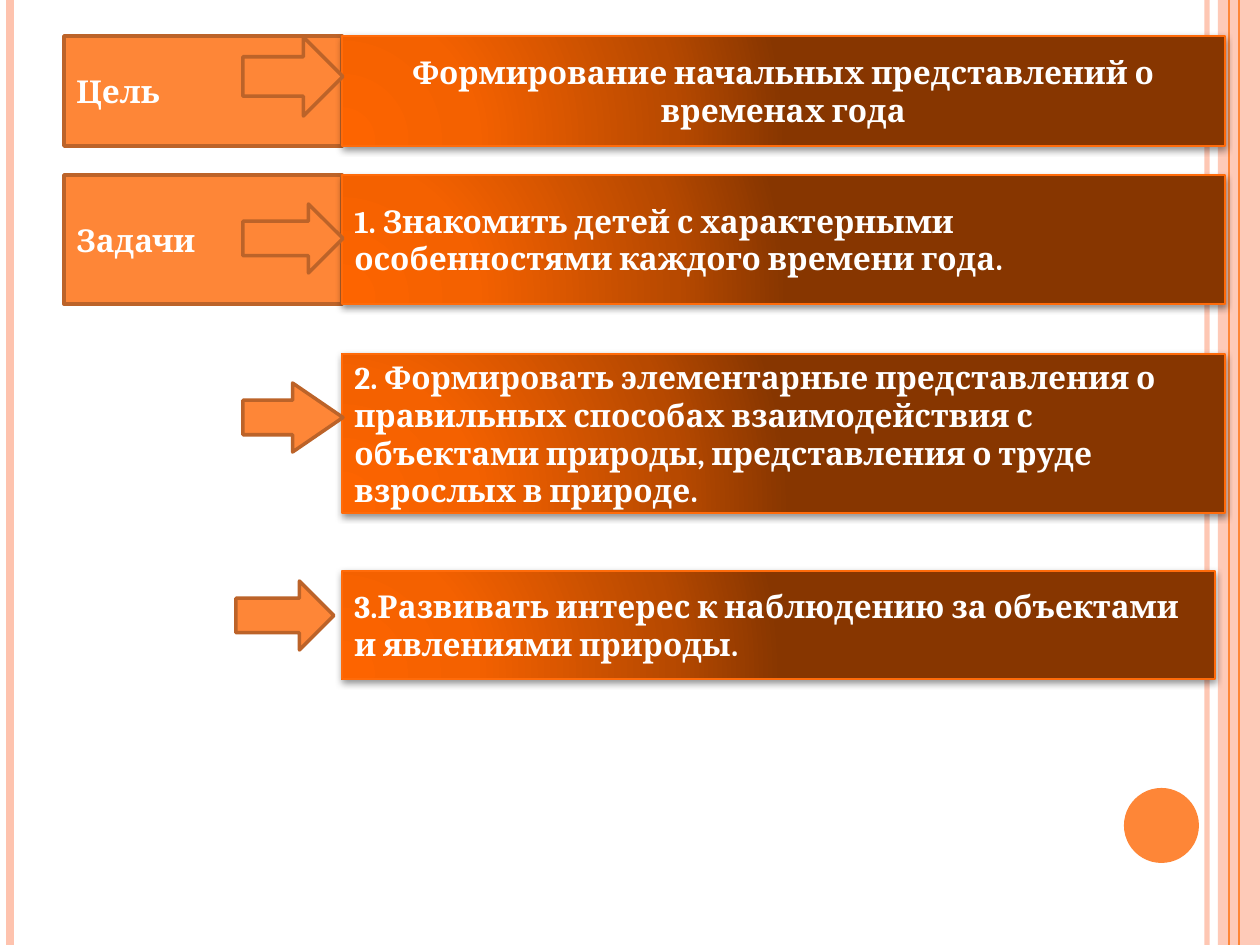
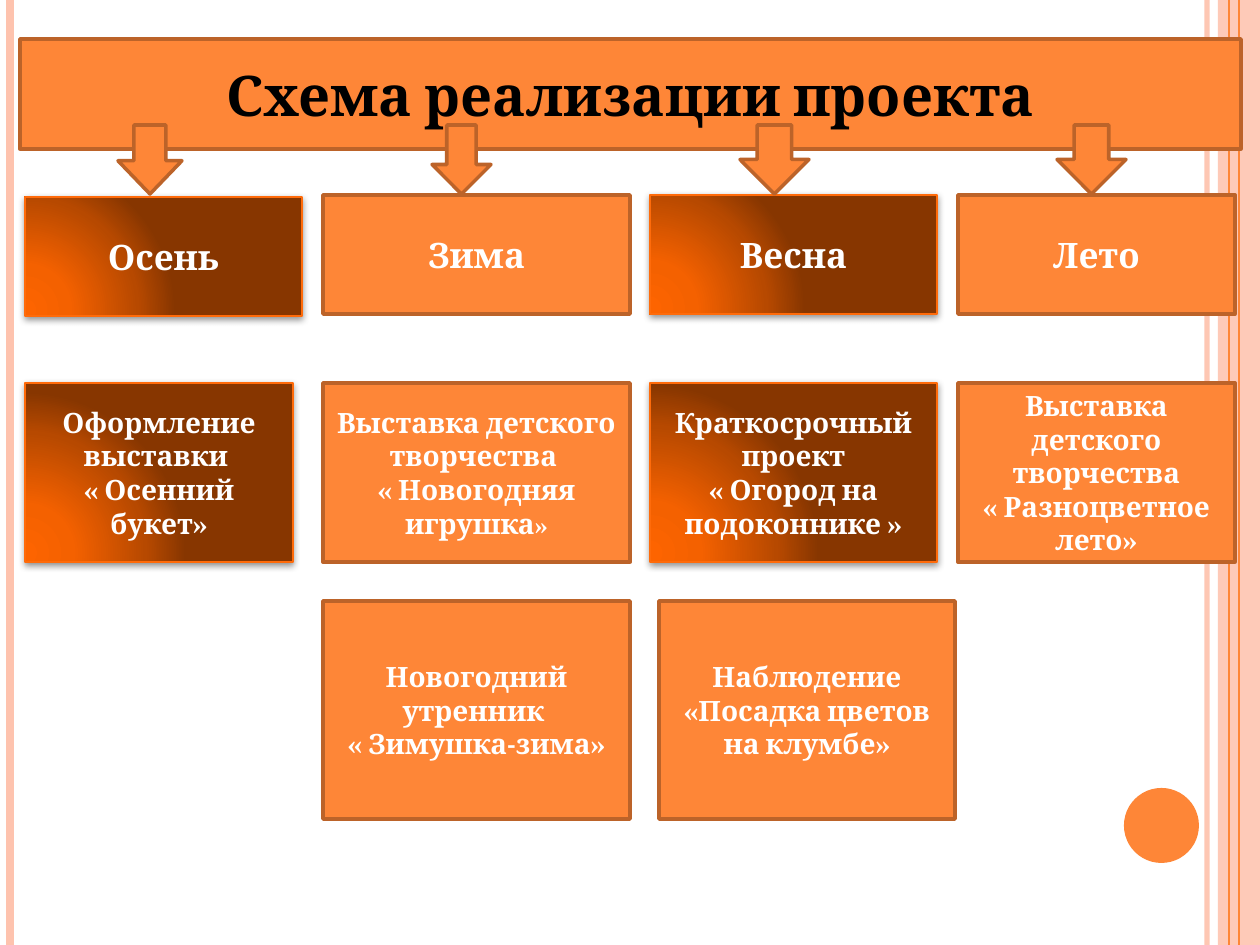
from dataclasses import dataclass

from lxml.etree import SubElement
from pptx import Presentation
from pptx.dml.color import RGBColor
from pptx.enum.shapes import MSO_CONNECTOR, MSO_SHAPE
from pptx.enum.text import MSO_ANCHOR, MSO_AUTO_SIZE, PP_ALIGN
from pptx.oxml import parse_xml
from pptx.oxml.ns import nsdecls, qn
from pptx.util import Emu, Pt

EMU_PER_PX = 914400 / 126
SLIDE_WIDTH, SLIDE_HEIGHT = 1260, 945

WHITE = RGBColor(0xFF, 0xFF, 0xFF)
BLACK = RGBColor(0x00, 0x00, 0x00)
ORANGE = RGBColor(0xFE, 0x86, 0x37)
BROWN = RGBColor(0xBC, 0x63, 0x29)
PEACH = RGBColor(0xFE, 0xC3, 0xAE)
GLOW_EDGE = RGBColor(0xFF, 0x6B, 0x0A)
GLOW_STOPS = (
    (0, RGBColor(0xFD, 0x64, 0x00)),
    (30, RGBColor(0xF4, 0x61, 0x00)),
    (75, RGBColor(0xB7, 0x49, 0x00)),
    (100, RGBColor(0x87, 0x36, 0x00)),
)
FONT = "Cambria"


@dataclass(frozen=True)
class Rule:
    x: int
    width: float
    color: RGBColor
    opacity: int = 100


@dataclass(frozen=True)
class Box:
    left: int
    top: int
    width: int
    height: int
    paragraphs: tuple[str, ...]
    size: int = 18
    glowing: bool = False
    align: PP_ALIGN = PP_ALIGN.CENTER
    small_ending: str = ""


@dataclass(frozen=True)
class Arrow:
    left: int
    top: int
    width: int
    height: int
    kind: MSO_SHAPE = MSO_SHAPE.RIGHT_ARROW
    head: float = 0.5


@dataclass(frozen=True)
class Season:
    left: int
    width: int
    name: str
    event: tuple[str, ...]
    glowing: bool
    arrow_left: int
    arrow_width: int
    name_top: int = 195
    event_width: int = 0
    arrow_head: float = 0.5
    small_ending: str = ""


RULES = (
    Rule(1207, 3, PEACH, 93),
    Rule(10, 4.5, PEACH),
    Rule(1239, 1.5, ORANGE),
    Rule(1229, 0.75, ORANGE),
)

LABELS = (
    Box(64, 36, 278, 110, ("Цель",), align=PP_ALIGN.LEFT),
    Box(64, 175, 278, 129, ("Задачи",), align=PP_ALIGN.LEFT),
)
GOALS = (
    Box(342, 36, 883, 110, ("Формирование начальных представлений о временах года",), glowing=True),
    Box(342, 175, 883, 129, ("1. Знакомить детей с характерными особенностями каждого времени года.",),
        glowing=True, align=PP_ALIGN.LEFT),
    Box(342, 354, 883, 159, ("2. Формировать элементарные представления о правильных способах "
                             "взаимодействия с объектами природы, представления о труде взрослых в природе.",),
        glowing=True, align=PP_ALIGN.LEFT),
    Box(342, 571, 873, 108, ("3.Развивать интерес к наблюдению за объектами и явлениями природы.",),
        glowing=True, align=PP_ALIGN.LEFT),
)
GOAL_ARROWS = (
    Arrow(243, 37, 100, 79),
    Arrow(243, 204, 100, 69),
    Arrow(243, 383, 100, 69, head=0.73),
    Arrow(236, 581, 98, 69),
)

SEASONS = (
    Season(25, 277, "Осень", ("Оформление выставки ", "« Осенний букет»"), True, 118, 64,
           name_top=197, event_width=268, arrow_head=0.52),
    Season(323, 307, "Зима", ("Выставка детского творчества ", "« Новогодняя игрушка"), False, 432, 59,
           small_ending="»"),
    Season(650, 287, "Весна", ("Краткосрочный проект", "« Огород на подоконнике »"), True, 740, 69),
    Season(958, 277, "Лето", ("Выставка детского творчества", "« Разноцветное лето»"), False, 1057, 69),
)
EXTRA_EVENTS = (
    Box(323, 601, 307, 218, ("Новогодний утренник ", "« Зимушка-зима»"), 16),
    Box(659, 601, 296, 218, ("Наблюдение «Посадка цветов на клумбе»",), 16),
)


def px(value: float) -> Emu:
    return Emu(round(value * EMU_PER_PX))


def set_opacity(element, percent: int) -> None:
    color = element.find(".//" + qn("a:srgbClr"))
    SubElement(color, qn("a:alpha"), val=str(percent * 1000))


def add_plain_shape(slide, kind: MSO_SHAPE, left: int, top: int, width: int, height: int):
    shape = slide.shapes.add_shape(kind, px(left), px(top), px(width), px(height))
    shape.shadow.inherit = False
    return shape


def paint_flat(shape) -> None:
    shape.fill.solid()
    shape.fill.fore_color.rgb = ORANGE
    shape.line.color.rgb = BROWN
    shape.line.width = Pt(2)


def paint_glow(shape) -> None:
    shape.fill.gradient()
    stops = "".join(
        f'<a:gs pos="{position * 1000}"><a:srgbClr val="{color}"/></a:gs>' for position, color in GLOW_STOPS
    )
    properties = shape.element.spPr
    properties.replace(properties.find(qn("a:gradFill")), parse_xml(
        f'<a:gradFill {nsdecls("a")} rotWithShape="1"><a:gsLst>{stops}</a:gsLst><a:path path="circle">'
        '<a:fillToRect l="5000" t="100000" r="120000" b="10000"/></a:path></a:gradFill>'
    ))
    shape.line.color.rgb = GLOW_EDGE
    shape.line.width = Pt(1)
    properties.find(qn("a:effectLst")).append(parse_xml(
        f'<a:outerShdw {nsdecls("a")} blurRad="50800" dist="20320" dir="5400000" rotWithShape="0">'
        '<a:srgbClr val="000000"><a:alpha val="42000"/></a:srgbClr></a:outerShdw>'
    ))


def format_text(text_frame, size: int, color: RGBColor, align: PP_ALIGN) -> None:
    text_frame.word_wrap = True
    text_frame.vertical_anchor = MSO_ANCHOR.MIDDLE
    for paragraph in text_frame.paragraphs:
        paragraph.alignment = align
        for run in paragraph.runs:
            run.font.name = FONT
            run.font.size = Pt(size)
            run.font.bold = True
            run.font.color.rgb = color


def add_box(slide, box: Box) -> None:
    shape = add_plain_shape(slide, MSO_SHAPE.FLOWCHART_PROCESS, box.left, box.top, box.width, box.height)
    if box.glowing:
        paint_glow(shape)
    else:
        paint_flat(shape)
    text_frame = shape.text_frame
    text_frame.text = "\n".join(box.paragraphs)
    ending = None
    if box.small_ending:
        ending = text_frame.paragraphs[-1].add_run()
        ending.text = box.small_ending
    format_text(text_frame, box.size, WHITE, box.align)
    if ending is not None:
        ending.font.size = Pt(14)


def add_arrow(slide, arrow: Arrow) -> None:
    shape = add_plain_shape(slide, arrow.kind, arrow.left, arrow.top, arrow.width, arrow.height)
    shape.adjustments[1] = arrow.head
    paint_flat(shape)


def add_rule(slide, rule: Rule):
    connector = slide.shapes.add_connector(
        MSO_CONNECTOR.STRAIGHT, px(rule.x), px(0), px(rule.x), px(SLIDE_HEIGHT))
    connector.line.color.rgb = rule.color
    connector.line.width = Pt(rule.width)
    properties = connector.element.spPr
    if rule.opacity < 100:
        set_opacity(properties, rule.opacity)
    SubElement(properties, qn("a:effectLst"))
    return connector


def decorate_master(presentation, slide) -> None:
    band = add_plain_shape(slide, MSO_SHAPE.RECTANGLE, 1218, 0, 42, SLIDE_HEIGHT)
    circle = add_plain_shape(slide, MSO_SHAPE.OVAL, 1124, 788, 75, 75)
    for shape, color in ((band, PEACH), (circle, ORANGE)):
        shape.fill.solid()
        shape.fill.fore_color.rgb = color
        shape.line.fill.background()
    set_opacity(band.element.spPr, 87)
    rules = [add_rule(slide, rule) for rule in RULES]
    master_tree = presentation.slide_master.shapes.element
    for number, shape in enumerate((band, *rules, circle), start=100):
        shape.element.find(".//" + qn("p:cNvPr")).set("id", str(number))
        master_tree.append(shape.element)


def fill_goals_slide(slide) -> None:
    for box in LABELS + GOALS:
        add_box(slide, box)
    for arrow in GOAL_ARROWS:
        add_arrow(slide, arrow)


def set_title(slide, text: str) -> None:
    title = slide.shapes.title
    title.left, title.top, title.width, title.height = px(20), px(39), px(1221), px(110)
    paint_flat(title)
    title.text_frame.text = text
    title.text_frame.auto_size = MSO_AUTO_SIZE.NONE
    format_text(title.text_frame, 32, BLACK, PP_ALIGN.CENTER)


def fill_seasons_slide(slide) -> None:
    set_title(slide, "Схема реализации проекта")
    for season in SEASONS:
        add_box(slide, Box(season.left, season.name_top, season.width, 119, (season.name,), 20, season.glowing))
        add_box(slide, Box(season.left, 383, season.event_width or season.width, 179, season.event, 16,
                           season.glowing, small_ending=season.small_ending))
        add_arrow(slide, Arrow(season.arrow_left, 125, season.arrow_width, 69,
                               MSO_SHAPE.DOWN_ARROW, season.arrow_head))
    for box in EXTRA_EVENTS:
        add_box(slide, box)


def main() -> None:
    presentation = Presentation()
    presentation.slide_width = px(SLIDE_WIDTH)
    presentation.slide_height = px(SLIDE_HEIGHT)
    title_only, blank = presentation.slide_layouts[5], presentation.slide_layouts[6]
    goals_slide = presentation.slides.add_slide(blank)
    decorate_master(presentation, goals_slide)
    fill_goals_slide(goals_slide)
    fill_seasons_slide(presentation.slides.add_slide(title_only))
    presentation.save("out.pptx")


if __name__ == "__main__":
    main()
